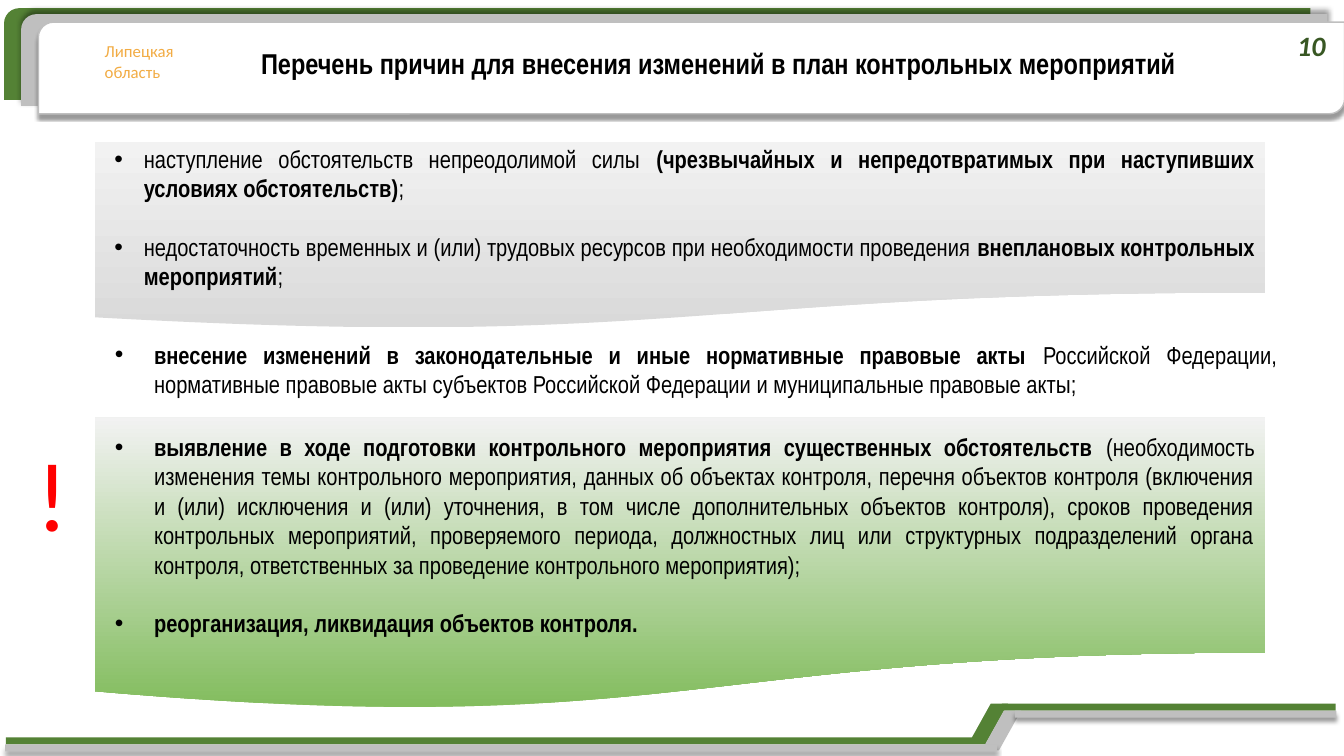
from lxml import etree
from pptx import Presentation
from pptx.dml.color import RGBColor
from pptx.enum.shapes import MSO_SHAPE as Kind
from pptx.enum.text import MSO_ANCHOR as Anchor, PP_ALIGN as Align
from pptx.oxml.ns import qn
from pptx.util import Pt

GREEN = RGBColor(0x54, 0x82, 0x35)
LIME = RGBColor(0x81, 0xBC, 0x5C)
DARK = RGBColor(0x38, 0x57, 0x23)
GREY = RGBColor(0xBF, 0xBF, 0xBF)
MIST = RGBColor(0xD9, 0xD9, 0xD9)
PALE = RGBColor(0xF2, 0xF2, 0xF2)
WHITE = RGBColor(0xFF, 0xFF, 0xFF)
BLACK = RGBColor(0, 0, 0)
RED = RGBColor(0xFF, 0, 0)
AMBER = RGBColor(0xF2, 0xAC, 0x44)

# Content: a paragraph is a list of (text, bold) runs
TITLE = "Перечень причин для внесения изменений в план контрольных мероприятий"
REGION = ["Липецкая", "область"]
FORCE = [
    [("наступление обстоятельств непреодолимой силы ", False),
     ("(чрезвычайных и непредотвратимых при наступивших условиях обстоятельств)", True),
     (";", False)],
    [("недостаточность временных и (или) трудовых ресурсов при необходимости проведения ", False),
     ("внеплановых контрольных мероприятий", True),
     (";", False)],
]
LAWS = [
    [("внесение изменений в законодательные и иные нормативные правовые акты ", True),
     ("Российской Федерации, нормативные правовые акты субъектов Российской Федерации "
      "и муниципальные правовые акты;", False)],
]
FACTS = [
    [("выявление в ходе подготовки контрольного мероприятия существенных обстоятельств", True),
     (" (необходимость изменения темы контрольного мероприятия, данных об объектах контроля, "
      "перечня объектов контроля (включения и (или) исключения и (или) уточнения, в том числе "
      "дополнительных объектов контроля), сроков проведения контрольных мероприятий, "
      "проверяемого периода, должностных лиц или структурных подразделений органа контроля, "
      "ответственных за проведение контрольного мероприятия);", False)],
    [("реорганизация, ликвидация объектов контроля.", True)],
]

# Box (left, top, width, height), text, left margin, hanging indent, gradient base
WAVES = [
    ((67.7, 101.5, 836, 134), FORCE, 28, 21, MIST),
    ((67.7, 235.4, 851.8, 70.6), LAWS, 35.3, 28, None),
    ((67.7, 298.1, 836, 209.5), FACTS, 35.3, 28, LIME),
]
# Left, top, fill, line, shadow (blur, distance, angle)
CARDS = [
    (2.9, 5.8, GREEN, None, None),
    (15.1, 10.1, GREY, None, (4, 3, 270)),
    (27.4, 15.8, WHITE, GREY, (2, 3, 90)),
]
# Slant corner, (left, width) of the low and high bars, fill, shadow
STRIPES = [
    ((691.9, 502.6), (4.3, 700), (715.7, 238.3), GREEN, None),
    ((701.3, 507.6), (3.6, 708.5), (725, 229.7), GREY, (3, 3, 90)),
]
BAR = 5
DROP = 24.2

deck = Presentation()
deck.slide_width, deck.slide_height = Pt(960), Pt(540)
slide = deck.slides.add_slide(deck.slide_layouts[6])
shapes = slide.shapes


def shade(shape, blur, gap, angle):
    fx = shape._element.spPr.find(qn("a:effectLst"))
    drop = etree.SubElement(fx, qn("a:outerShdw"), blurRad=str(Pt(blur)), dist=str(Pt(gap)),
                            dir=str(angle * 60000), algn="t", rotWithShape="0")
    tint = etree.SubElement(drop, qn("a:srgbClr"), val="000000")
    etree.SubElement(tint, qn("a:alpha"), val="40000")


def paint(shape, fill=None, line=None, glow=None):
    shape.shadow.inherit = False
    if fill is None:
        shape.fill.background()
    else:
        shape.fill.solid()
        shape.fill.fore_color.rgb = fill
    if line is None:
        shape.line.fill.background()
    else:
        shape.line.color.rgb = line
        shape.line.width = Pt(1)
    if glow:
        shade(shape, *glow)
    return shape


def add(kind, box, **look):
    return paint(shapes.add_shape(kind, *map(Pt, box)), **look)


def label(box):
    return shapes.add_textbox(*map(Pt, box))


def write(shape, paras, size=17.5, font="Arial Narrow", color=BLACK, bold=False, italic=False,
          align=Align.LEFT, anchor=Anchor.TOP, margin=0, hang=0, gap=0):
    frame = shape.text_frame
    frame.word_wrap = True
    frame.vertical_anchor = anchor
    for i, runs in enumerate(paras):
        para = frame.add_paragraph() if i else frame.paragraphs[0]
        if hang:
            props = para._p.get_or_add_pPr()
            props.set("marL", str(Pt(margin)))
            props.set("indent", str(-Pt(hang)))
            etree.SubElement(props, qn("a:buFont"), typeface="Arial")
            etree.SubElement(props, qn("a:buChar"), char="•")
        para.alignment = align
        if i and gap:
            para.space_before = Pt(gap)
        for text, strong in [(runs, bold)] if isinstance(runs, str) else runs:
            run = para.add_run()
            run.text = text
            face = run.font
            face.size, face.name = Pt(size), font
            face.bold, face.italic = strong, italic
            face.color.rgb = color


# Header cards
for left, top, fill, line, glow in CARDS:
    add(Kind.ROUND_2_DIAG_RECTANGLE, (left, top, 933.1, 65.5), fill=fill, line=line, glow=glow)
write(label((67.7, 25.9, 65.5, 36)), REGION, size=12, font="Calibri", color=AMBER)

# Footer stripes: a slanted link between a low bar and a high bar
for (x, y), low, high, fill, glow in STRIPES:
    dots = [(x, y + 28.4), (x + 15.8, y), (x + 28.1, y), (x + 12.3, y + 28.4)]
    pen = shapes.build_freeform(*map(Pt, dots[0]), scale=1.0)
    pen.add_line_segments([(Pt(a), Pt(b)) for a, b in dots[1:]], close=True)
    paint(pen.convert_to_shape(), fill=fill)
    for (left, width), top in ((low, y + DROP), (high, y)):
        add(Kind.RECTANGLE, (left, top, width, BAR), fill=fill, glow=glow)

# Title and exclamation mark
write(label((139.7, 29.5, 747.4, 32.4)), [TITLE], size=20.5, bold=True, align=Align.CENTER)
write(label((14.4, 306, 46.8, 92.2)), ["!"], size=70, font="Calibri", color=RED,
      align=Align.CENTER)

# Reasons
for box, paras, margin, hang, base in WAVES:
    wave = add(Kind.FLOWCHART_DOCUMENT, box)
    if base is not None:
        wave.fill.gradient()
        wave.fill.gradient_angle = 90
        for stop, spot, color in zip(wave.fill.gradient_stops, (0, 1), (base, PALE)):
            stop.position, stop.color.rgb = spot, color
    write(wave, paras, align=Align.JUSTIFY, anchor=Anchor.MIDDLE, margin=margin, hang=hang, gap=21)

# Slide number
write(label((913.7, 19.4, 46.1, 26.6)), ["10"], size=20, font="Calibri", color=DARK, bold=True,
      italic=True, align=Align.CENTER, anchor=Anchor.MIDDLE)

deck.save("out.pptx")
